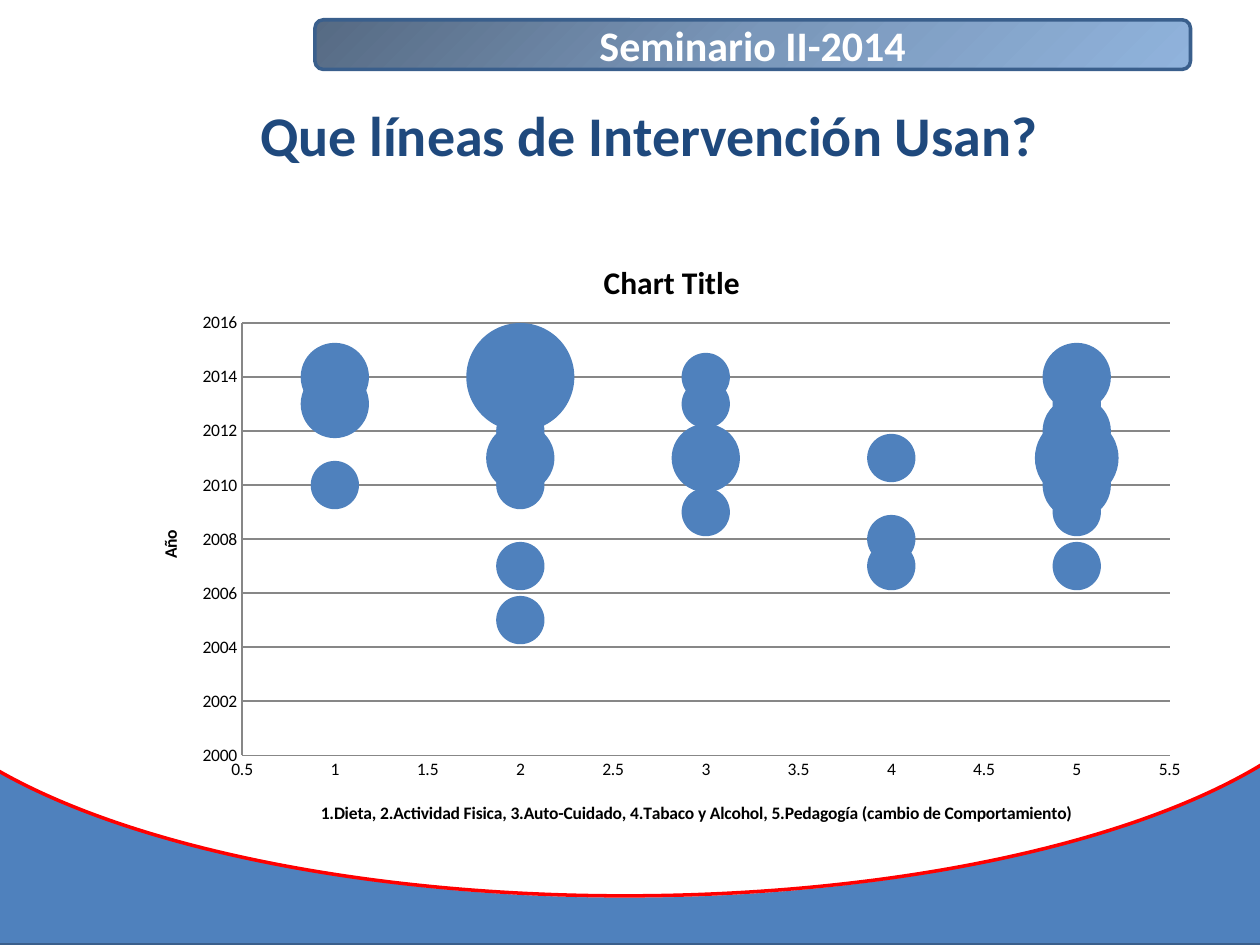
import copy

import pptx
import pptx.chart.data
import pptx.dml.color
import pptx.enum.chart
import pptx.enum.shapes
import pptx.enum.text
import pptx.oxml
import pptx.oxml.ns
import pptx.util

Cm, Pt = pptx.util.Cm, pptx.util.Pt
KIND = pptx.enum.shapes.MSO_SHAPE
FONT = "Calibri"
BLUE, WHITE, RED, EDGE = "4F81BD", "FFFFFF", "FF0000", "3A5F8C"

# Content
BANNER = "Seminario II-2014"
TITLE = "Que líneas de Intervención Usan?"
CHART = "Chart Title"
LINES = ("1.Dieta, 2.Actividad Fisica, 3.Auto-Cuidado, "
         "4.Tabaco y Alcohol, 5.Pedagogía (cambio de Comportamiento)")
YEAR = "Año"

# Line of work: (year, number of studies)
STUDIES = {
    1: [(2014, 2), (2013, 2), (2010, 1)],
    2: [(2014, 5), (2013, 1), (2012, 1), (2011, 2), (2010, 1), (2007, 1), (2005, 1)],
    3: [(2014, 1), (2013, 1), (2011, 2), (2009, 1)],
    4: [(2011, 1), (2008, 1), (2007, 1)],
    5: [(2014, 2), (2013, 1), (2012, 2), (2011, 3), (2010, 2), (2009, 1), (2007, 1)],
}

# Curved footer, back to front: kind, box in cm, fill, line
WAVE = [
    (KIND.RECTANGLE, (-2.39, 9.73, 30.76, 9.32), BLUE, EDGE),
    (KIND.OVAL, (-2.77, 6.15, 30.76, 11.91), WHITE, WHITE),
    (KIND.OVAL, (-2.39, 7.14, 29.97, 10.92), None, RED),
    (KIND.RECTANGLE, (-2.39, 0, 30.76, 14.88), WHITE, WHITE),
]
SHADES = [(0, "566A83"), (0.5, "7A97BA"), (1, "90B3DC")]


def color(code):
    return pptx.dml.color.RGBColor.from_string(code)


def style(font, size, code, bold):
    font.name, font.size, font.bold = FONT, Pt(size), bold
    font.color.rgb = color(code)


def draw(slide, kind, box, fill, line):
    shape = slide.shapes.add_shape(kind, *map(Cm, box))
    shape.shadow.inherit = False
    if fill:
        shape.fill.solid()
        shape.fill.fore_color.rgb = color(fill)
    else:
        shape.fill.background()
    shape.line.color.rgb = color(line)
    shape.line.width = Pt(2)
    return shape


def write(frame, text, size, code):
    frame.text = text
    para = frame.paragraphs[0]
    para.alignment = pptx.enum.text.PP_ALIGN.CENTER
    style(para.runs[0].font, size, code, True)


def shade(fill):
    fill.gradient()
    fill.gradient_angle = 315
    first = fill.gradient_stops[0]._gs
    first.addnext(copy.deepcopy(first))
    for stop, (place, code) in zip(fill.gradient_stops, SHADES):
        stop.position = place
        stop.color.rgb = color(code)


def place(after, inner=False, **spots):
    """Put a manual chart layout right after the given element, or first in it."""
    target = '<c:layoutTarget val="inner"/>' if inner else ""
    modes = "".join(f'<c:{k}Mode val="edge"/>' for k in "xy")
    sizes = "".join(f'<c:{k} val="{v}"/>' for k, v in spots.items())
    node = pptx.oxml.parse_xml(
        f'<c:layout {pptx.oxml.ns.nsdecls("c")}><c:manualLayout>'
        f"{target}{modes}{sizes}</c:manualLayout></c:layout>")
    home = after if inner else after.getparent()
    for old in home.findall(pptx.oxml.ns.qn("c:layout")):
        home.remove(old)
    if inner:
        home.insert(0, node)
    else:
        after.addnext(node)


def label(title, text, size, x, y):
    write(title.text_frame, text, size, "000000")
    place(title._element.find(pptx.oxml.ns.qn("c:tx")), x=x, y=y)


def scale(axis, low, high, step, grid):
    axis.minimum_scale, axis.maximum_scale, axis.major_unit = low, high, step
    axis.has_major_gridlines = grid
    axis.major_tick_mark = axis.minor_tick_mark = pptx.enum.chart.XL_TICK_MARK.NONE
    lines = [axis.format.line]
    if grid:
        lines.append(axis.major_gridlines.format.line)
    for line in lines:
        line.color.rgb = color("878787")
        line.width = Pt(0.75)
    axis.tick_labels.number_format = "General"
    axis.tick_labels.number_format_is_linked = False
    style(axis.tick_labels.font, 10, "000000", False)


def plot(slide):
    data = pptx.chart.data.BubbleChartData()
    series = data.add_series("Series 1")
    for line, points in STUDIES.items():
        for year, count in points:
            series.add_data_point(line, year, count)
    chart = slide.shapes.add_chart(
        pptx.enum.chart.XL_CHART_TYPE.BUBBLE,
        Cm(2.49), Cm(4.52), Cm(21.74), Cm(12.45), data).chart
    style(chart.font, 10, "000000", False)
    chart.has_legend = False
    chart.has_title = True
    fill = chart.plots[0].series[0].format.fill
    fill.solid()
    fill.fore_color.rgb = color(BLUE)

    # Axes and titles
    across, up = chart.category_axis, chart.value_axis
    scale(across, 0.5, 5.5, 0.5, False)
    scale(up, 2000, 2016, 2, True)
    label(chart.chart_title, CHART, 18, 0.44, 0.05)
    label(across.axis_title, LINES, 10, 0.18, 0.93)
    label(up.axis_title, YEAR, 10, 0.03, 0.49)
    up.axis_title.text_frame._txBody.bodyPr.set("rot", "-5400000")
    area = chart._chartSpace.find(".//" + pptx.oxml.ns.qn("c:plotArea"))
    place(area, True, x=0.11, y=0.16, w=0.86, h=0.7)


def main():
    deck = pptx.Presentation()
    deck.slide_width, deck.slide_height = Cm(25.4), Cm(19.05)
    slide = deck.slides.add_slide(deck.slide_layouts[5])

    # Footer and banner
    for part in WAVE:
        draw(slide, *part)
    banner = draw(slide, KIND.ROUNDED_RECTANGLE, (6.35, 0.4, 17.65, 1), BLUE, EDGE)
    shade(banner.fill)
    banner.text_frame.vertical_anchor = pptx.enum.text.MSO_ANCHOR.MIDDLE
    write(banner.text_frame, BANNER, 24, WHITE)

    # Title, in front of the footer shapes
    title = slide.shapes.title
    slide.shapes._spTree.append(title._element)
    title.left, title.top, title.width, title.height = map(Cm, (2.97, 1.78, 20.24, 3.18))
    title.text_frame.vertical_anchor = pptx.enum.text.MSO_ANCHOR.TOP
    title.text_frame.margin_top = Cm(0.25)
    write(title.text_frame, TITLE, 32, "1F497D")

    plot(slide)
    deck.save("out.pptx")


if __name__ == "__main__":
    main()
